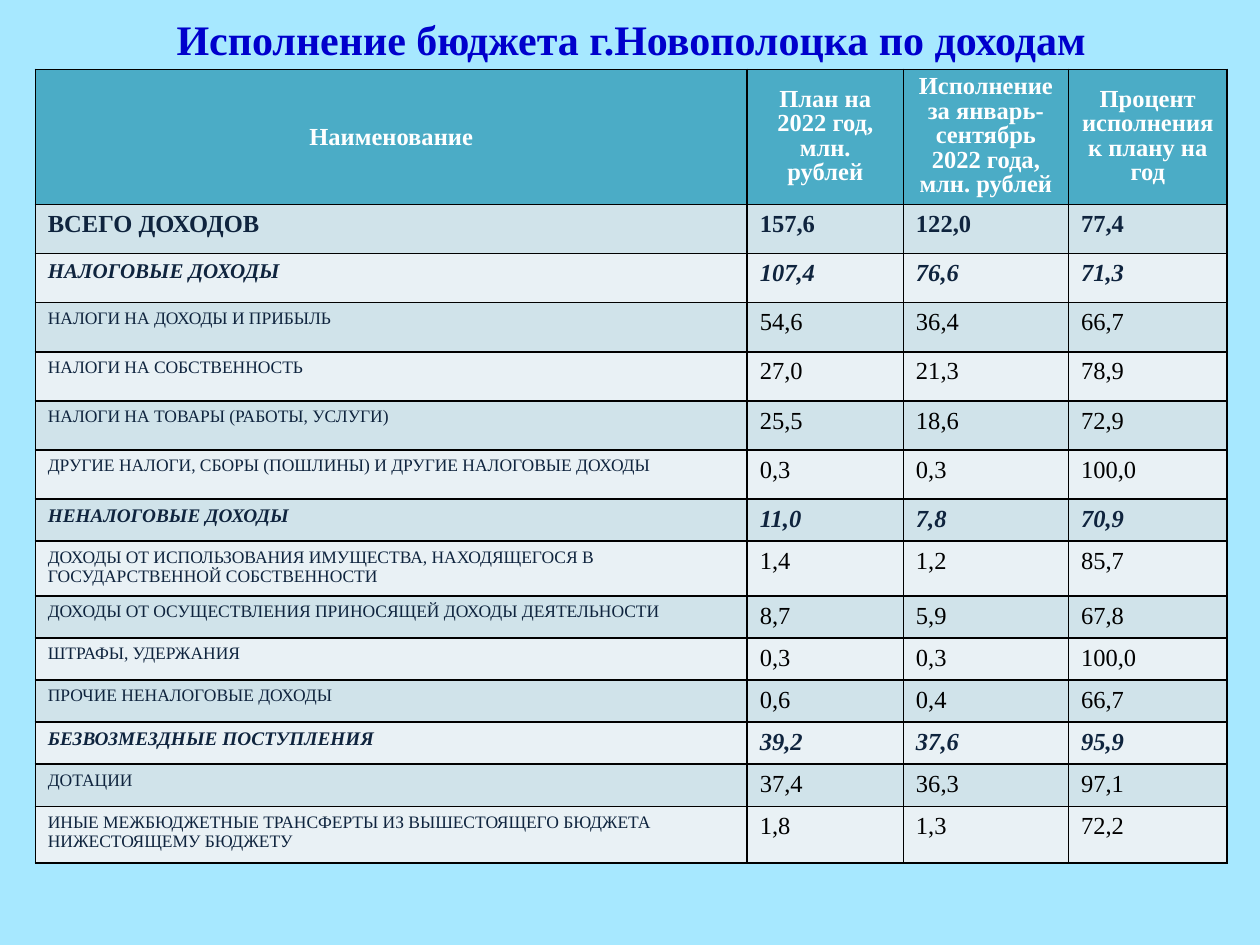
from dataclasses import dataclass
from typing import NamedTuple

from lxml.etree import SubElement
from pptx import Presentation
from pptx.dml.color import RGBColor
from pptx.enum.text import MSO_ANCHOR as Anchor, PP_ALIGN as Align
from pptx.oxml.ns import qn
from pptx.util import Inches, Pt


@dataclass(frozen=True)
class Theme:
    font: str = "Times New Roman"
    background: str = "A7E8FF"
    title: str = "0000CC"
    header: str = "4BACC6"
    header_text: str = "FFFFFF"
    bands: tuple = ("D0E3EA", "E9F1F5")
    navy: str = "0F243E"
    black: str = "000000"
    title_size: int = 24
    value_size: int = 14
    item_size: int = 10


class Style(NamedTuple):
    size: int
    color: str
    bold: bool = False
    italic: bool = False


class Kind(NamedTuple):
    label: Style
    value: Style


class Line(NamedTuple):
    kind: Kind
    height: int
    name: str
    values: str


T = Theme()
WIDTH, HEIGHT = Inches(10), Inches(7.5)
GRID_COLUMNS = 1000
UNIT = WIDTH // GRID_COLUMNS

TITLE_STYLE = Style(T.title_size, T.title, True)
HEADER_STYLE = Style(T.value_size, T.header_text, True)
TOTAL_STYLE = Style(T.value_size, T.navy, True)
GROUP_VALUE = Style(T.value_size, T.navy, True, True)
TOTAL = Kind(TOTAL_STYLE, TOTAL_STYLE)
MAIN_GROUP = Kind(Style(12, T.navy, True, True), GROUP_VALUE)
GROUP = Kind(Style(11, T.navy, True, True), GROUP_VALUE)
ITEM = Kind(Style(T.item_size, T.navy), Style(T.value_size, T.black))

TALL, SHORT = 39, 32
HEADER_HEIGHT = 104
COLUMNS = (
    ("Наименование", 565),
    ("План на 2022 год, млн. рублей", 124),
    ("Исполнение за январь-сентябрь 2022 года, млн. рублей", 131),
    ("Процент исполнения к плану на год", 126),
)
LINES = (
    Line(TOTAL, TALL, "ВСЕГО ДОХОДОВ", "157,6 122,0 77,4"),
    Line(MAIN_GROUP, TALL, "НАЛОГОВЫЕ ДОХОДЫ", "107,4 76,6 71,3"),
    Line(ITEM, TALL, "НАЛОГИ НА ДОХОДЫ И ПРИБЫЛЬ", "54,6 36,4 66,7"),
    Line(ITEM, TALL, "НАЛОГИ НА СОБСТВЕННОСТЬ", "27,0 21,3 78,9"),
    Line(ITEM, TALL, "НАЛОГИ НА ТОВАРЫ (РАБОТЫ, УСЛУГИ)", "25,5 18,6 72,9"),
    Line(ITEM, TALL, "ДРУГИЕ НАЛОГИ, СБОРЫ (ПОШЛИНЫ) И ДРУГИЕ НАЛОГОВЫЕ ДОХОДЫ",
         "0,3 0,3 100,0"),
    Line(GROUP, SHORT, "НЕНАЛОГОВЫЕ ДОХОДЫ", "11,0 7,8 70,9"),
    Line(ITEM, 42, "ДОХОДЫ ОТ ИСПОЛЬЗОВАНИЯ ИМУЩЕСТВА, НАХОДЯЩЕГОСЯ В "
         "ГОСУДАРСТВЕННОЙ СОБСТВЕННОСТИ", "1,4 1,2 85,7"),
    Line(ITEM, SHORT, "ДОХОДЫ ОТ ОСУЩЕСТВЛЕНИЯ ПРИНОСЯЩЕЙ ДОХОДЫ ДЕЯТЕЛЬНОСТИ",
         "8,7 5,9 67,8"),
    Line(ITEM, SHORT, "ШТРАФЫ, УДЕРЖАНИЯ", "0,3 0,3 100,0"),
    Line(ITEM, SHORT, "ПРОЧИЕ НЕНАЛОГОВЫЕ ДОХОДЫ", "0,6 0,4 66,7"),
    Line(GROUP, SHORT, "БЕЗВОЗМЕЗДНЫЕ ПОСТУПЛЕНИЯ", "39,2 37,6 95,9"),
    Line(ITEM, SHORT, "ДОТАЦИИ", "37,4 36,3 97,1"),
    Line(ITEM, 45, "ИНЫЕ МЕЖБЮДЖЕТНЫЕ ТРАНСФЕРТЫ ИЗ ВЫШЕСТОЯЩЕГО БЮДЖЕТА "
         "НИЖЕСТОЯЩЕМУ БЮДЖЕТУ", "1,8 1,3 72,2"),
)


def write(tf, text: str, style: Style, **paragraph_format) -> None:
    p = tf.paragraphs[0]
    for name, value in paragraph_format.items():
        setattr(p, name, value)
    r = p.add_run()
    r.text = text
    font_format = {"name": T.font, "size": Pt(style.size),
                   "bold": style.bold, "italic": style.italic}
    for name, value in font_format.items():
        setattr(r.font, name, value)
    r.font.color.rgb = RGBColor.from_string(style.color)


def paint_cell(cell, fill: str) -> None:
    tc_pr = cell._tc.get_or_add_tcPr()
    for side in ("a:lnL", "a:lnR", "a:lnT", "a:lnB"):
        ln = SubElement(tc_pr, qn(side), w=str(Pt(1)))
        solid = SubElement(ln, qn("a:solidFill"))
        SubElement(solid, qn("a:srgbClr"), val=T.black)
    cell.fill.solid()
    cell.fill.fore_color.rgb = RGBColor.from_string(fill)


def add_title(s, text: str) -> None:
    sp = s.shapes.add_textbox(51 * UNIT, 4 * UNIT, 900 * UNIT, 32 * UNIT)
    tf = sp.text_frame
    tf.word_wrap = True
    tf.vertical_anchor = Anchor.MIDDLE
    write(tf, text, TITLE_STYLE, alignment=Align.CENTER, line_spacing=Pt(44))


def add_budget_table(s) -> None:
    heights = [HEADER_HEIGHT] + [line.height for line in LINES]
    widths = [width for _, width in COLUMNS]
    table = s.shapes.add_table(len(heights), len(widths), 28 * UNIT, 55 * UNIT,
                               sum(widths) * UNIT, sum(heights) * UNIT).table
    for row, height in zip(table.rows, heights):
        row.height = height * UNIT
    for i, (heading, width) in enumerate(COLUMNS):
        table.columns[i].width = width * UNIT
        cell = table.cell(0, i)
        cell.vertical_anchor = Anchor.MIDDLE
        spacing = {"line_spacing": Pt(14)} if i else {}
        write(cell.text_frame, heading, HEADER_STYLE,
              alignment=Align.CENTER, **spacing)
        paint_cell(cell, T.header)
    for i, line in enumerate(LINES):
        for j, text in enumerate((line.name, *line.values.split())):
            cell = table.cell(i + 1, j)
            write(cell.text_frame, text, line.kind.value if j else line.kind.label)
            paint_cell(cell, T.bands[i % 2])


def main() -> None:
    prs = Presentation()
    prs.slide_width, prs.slide_height = WIDTH, HEIGHT
    s = prs.slides.add_slide(prs.slide_layouts[6])
    s.background.fill.solid()
    s.background.fill.fore_color.rgb = RGBColor.from_string(T.background)
    add_title(s, "Исполнение бюджета г.Новополоцка по доходам")
    add_budget_table(s)
    prs.save("out.pptx")


if __name__ == "__main__":
    main()
